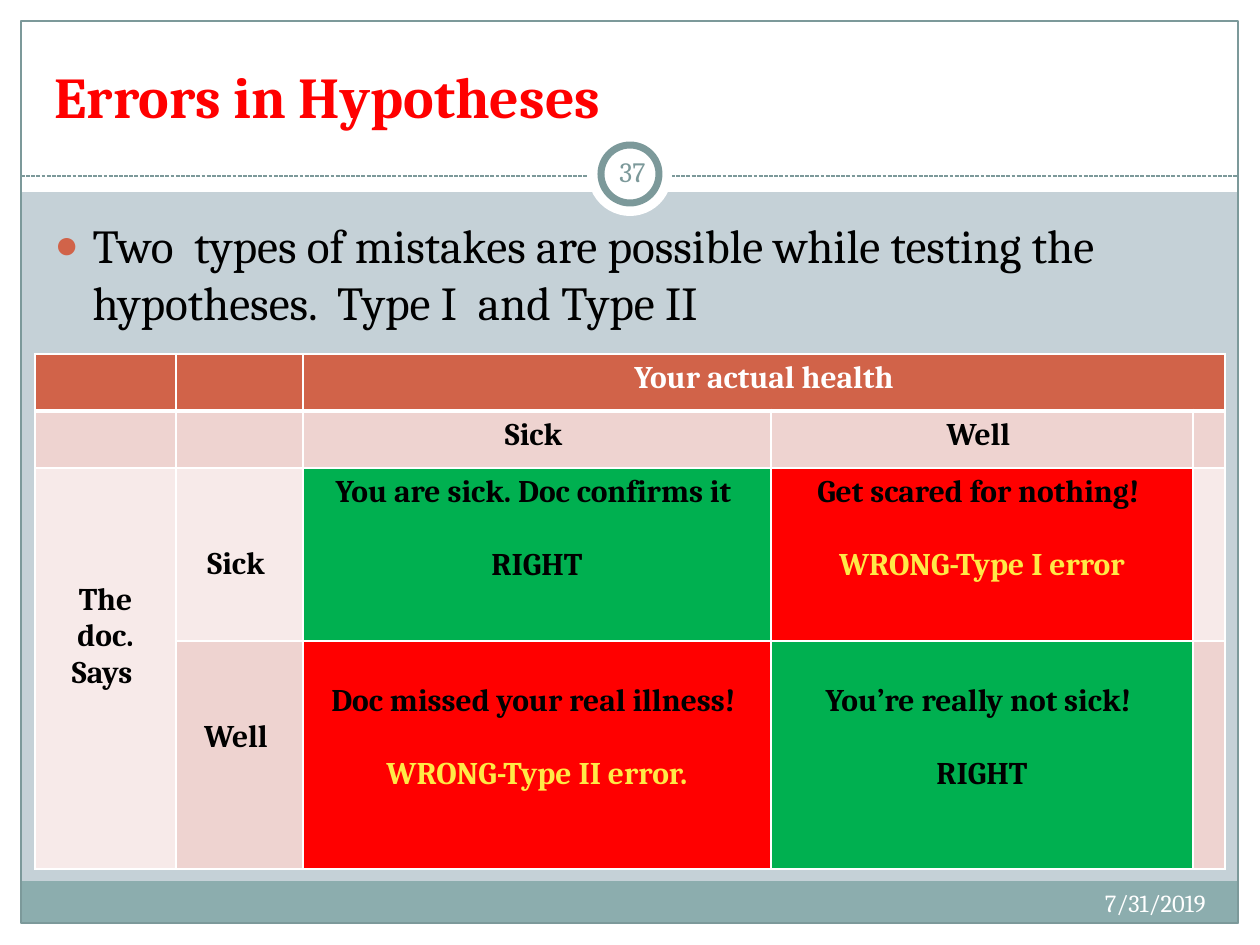
from dataclasses import dataclass

from lxml import etree
from pptx import Presentation
from pptx.dml.color import RGBColor
from pptx.enum import dml, shapes, text
from pptx.oxml import ns
from pptx.util import Pt

SCALE = 914400 / 126  # EMU in one px


@dataclass(frozen=True)
class Theme:
    font: str = "Cambria"
    page: str = "C5D1D7"
    white: str = "FFFFFF"
    black: str = "000000"
    frame: str = "7C999A"
    footer: str = "8CADAE"
    accent: str = "D16349"
    band_dark: str = "EED3D0"
    band_light: str = "F7EAE9"
    right: str = "00B050"
    wrong: str = "FF0000"
    error: str = "FFE947"
    title_size: int = 33
    body_size: int = 27
    table_size: int = 18
    number_size: int = 16
    date_size: int = 14


T = Theme()
LINE = 36  # height of one table text line, px
PAD = 6    # normal top margin of a cell, px


def px(n):
    return round(n * SCALE)


def rgb(value):
    return RGBColor.from_string(value)


def set_attrs(obj, **values):
    for name, value in values.items():
        setattr(obj, name, value)


def place(sp, left, top, width, height):
    set_attrs(sp, left=px(left), top=px(top), width=px(width), height=px(height))


def write(p, content, size, color, bold=False, align=text.PP_ALIGN.LEFT):
    p.alignment = align
    r = p.add_run()
    r.text = content
    set_attrs(r.font, name=T.font, size=Pt(size), bold=bold)
    r.font.color.rgb = rgb(color)


def add_block(slide, kind, box, fill=None, line=None, weight=0.75):
    sp = slide.shapes.add_shape(kind, *map(px, box))
    sp.shadow.inherit = False
    if fill:
        sp.fill.solid()
        sp.fill.fore_color.rgb = rgb(fill)
    else:
        sp.fill.background()
    if line:
        sp.line.color.rgb = rgb(line)
        sp.line.width = Pt(weight)
    else:
        sp.line.fill.background()


def add_rule(slide, x1, x2, y):
    line = slide.shapes.add_connector(shapes.MSO_CONNECTOR.STRAIGHT,
                                      px(x1), px(y), px(x2), px(y))
    set_attrs(line.line, width=Pt(0.75), dash_style=dml.MSO_LINE.SQUARE_DOT)
    line.line.color.rgb = rgb(T.frame)
    etree.SubElement(line._element.spPr, ns.qn("a:effectLst"))


def add_label(slide, box, content, size, color, align, **frame):
    tf = slide.shapes.add_textbox(*map(px, box)).text_frame
    set_attrs(tf, word_wrap=True, **frame)
    write(tf.paragraphs[0], content, size, color, align=align)


def fill_placeholder(sp, box, content, size, color, anchor, bold=False):
    place(sp, *box)
    tf = sp.text_frame
    set_attrs(tf, vertical_anchor=anchor, word_wrap=True,
              auto_size=text.MSO_AUTO_SIZE.NONE)
    write(tf.paragraphs[0], content, size, color, bold)
    sp._element.getparent().append(sp._element)  # bring in front of the frame
    return tf.paragraphs[0]


def set_bullet(p, indent):
    pPr = p._p.get_or_add_pPr()
    pPr.set("marL", str(px(indent)))
    pPr.set("indent", str(-px(indent)))
    color = etree.SubElement(pPr, ns.qn("a:buClr"))
    etree.SubElement(color, ns.qn("a:srgbClr"), val=T.accent)
    etree.SubElement(pPr, ns.qn("a:buSzPct"), val="85000")
    etree.SubElement(pPr, ns.qn("a:buChar"), char="●")


def set_borders(cell, **weights):
    tcPr = cell._tc.get_or_add_tcPr()
    for side in "LRTB":
        ln = etree.SubElement(tcPr, ns.qn(f"a:ln{side}"),
                              w=str(Pt(weights.get(side, 1))))
        fill = etree.SubElement(ln, ns.qn("a:solidFill"))
        etree.SubElement(fill, ns.qn("a:srgbClr"), val=T.white)


def write_cell(cell, lines, skip=0):
    """Lines are (wording, colour); skip is the number of lines left free above."""
    cell.margin_top = px(PAD + skip * LINE)
    tf = cell.text_frame
    for i, (content, color) in enumerate(lines):
        p = tf.paragraphs[0] if i == 0 else tf.add_paragraph()
        if i:
            p.space_before = Pt(21)
        write(p, content, T.table_size, color, True, text.PP_ALIGN.CENTER)


def add_outcomes(slide):
    cols, rows = [141, 127, 468, 422, 32], [57, 57, 173, 228]
    frame = slide.shapes.add_table(len(rows), len(cols), px(35), px(354),
                                   px(sum(cols)), px(sum(rows)))
    table = frame.table
    for col, width in zip(table.columns, cols):
        col.width = px(width)
    for row, height in zip(table.rows, rows):
        row.height = px(height)

    # Row bands, with the four outcomes in their own colours
    bands = [T.accent, T.band_dark, T.band_light, T.band_dark]
    outcomes = {(2, 2): T.right, (2, 3): T.wrong, (3, 2): T.wrong, (3, 3): T.right}
    heavy = {0: {"B": 3}, 1: {"T": 3}}
    for r, band in enumerate(bands):
        for c in range(len(cols)):
            cell = table.cell(r, c)
            set_borders(cell, **heavy.get(r, {}))
            cell.fill.solid()
            cell.fill.fore_color.rgb = rgb(outcomes.get((r, c), band))
    table.cell(0, 2).merge(table.cell(0, 4))
    table.cell(2, 0).merge(table.cell(3, 0))

    # Wording: row, column, free lines above, lines
    k = T.black
    for r, c, skip, lines in [
        (0, 2, 0, [("Your actual health", T.white)]),
        (1, 2, 0, [("Sick ", k)]),
        (1, 3, 0, [("Well ", k)]),
        (2, 0, 3, [("The doc. Says ", k)]),
        (2, 1, 2, [("Sick ", k)]),
        (2, 2, 0, [("You are sick. Doc confirms it ", k), ("RIGHT", k)]),
        (2, 3, 0, [("Get scared for nothing! ", k), ("WRONG-Type I error", T.error)]),
        (3, 1, 2, [("Well ", k)]),
        (3, 2, 1, [("Doc missed your real illness! ", k),
                   ("WRONG-Type II error.", T.error)]),
        (3, 3, 1, [("You’re really not sick! ", k), ("RIGHT", k)]),
    ]:
        write_cell(table.cell(r, c), lines, skip)


def add_frame(slide):
    rect, oval = shapes.MSO_SHAPE.RECTANGLE, shapes.MSO_SHAPE.OVAL
    # White margins and header
    for box in [(0, 924, 1260, 21), (0, 0, 1260, 192),
                (0, 0, 21, 945), (1239, 0, 21, 945)]:
        add_block(slide, rect, box, T.white)
    # Footer band, outline and divider
    add_block(slide, rect, (21, 881, 1217, 43), T.footer)
    add_block(slide, rect, (21, 21, 1217, 902), line=T.frame)
    add_rule(slide, 21, 1239, 176)
    # Ring for the slide number
    add_block(slide, oval, (588, 132, 84, 84), T.white)
    add_block(slide, oval, (601, 145, 58, 58), T.white, T.frame, 4)


def main():
    prs = Presentation()
    set_attrs(prs, slide_width=px(1260), slide_height=px(945))
    slide = prs.slides.add_slide(prs.slide_layouts[1])
    slide.background.fill.solid()
    slide.background.fill.fore_color.rgb = rgb(T.page)

    add_frame(slide)
    title, body = slide.placeholders
    fill_placeholder(title, (42, 31, 1176, 105), "Errors in Hypotheses",
                     T.title_size, T.wrong, text.MSO_ANCHOR.BOTTOM, True)
    add_label(slide, (798, 882, 420, 50), "7/31/2019", T.date_size, T.white,
              text.PP_ALIGN.RIGHT)
    add_label(slide, (601, 141, 63, 61), "37", T.number_size, T.frame,
              text.PP_ALIGN.CENTER, vertical_anchor=text.MSO_ANCHOR.MIDDLE,
              margin_left=px(6), margin_right=px(6))
    p = fill_placeholder(
        body, (42, 210, 1172, 708),
        "Two  types of mistakes are possible while testing the hypotheses."
        "  Type I  and Type II", T.body_size, T.black, text.MSO_ANCHOR.TOP)
    set_bullet(p, 38)
    add_outcomes(slide)
    prs.save("out.pptx")


if __name__ == "__main__":
    main()
